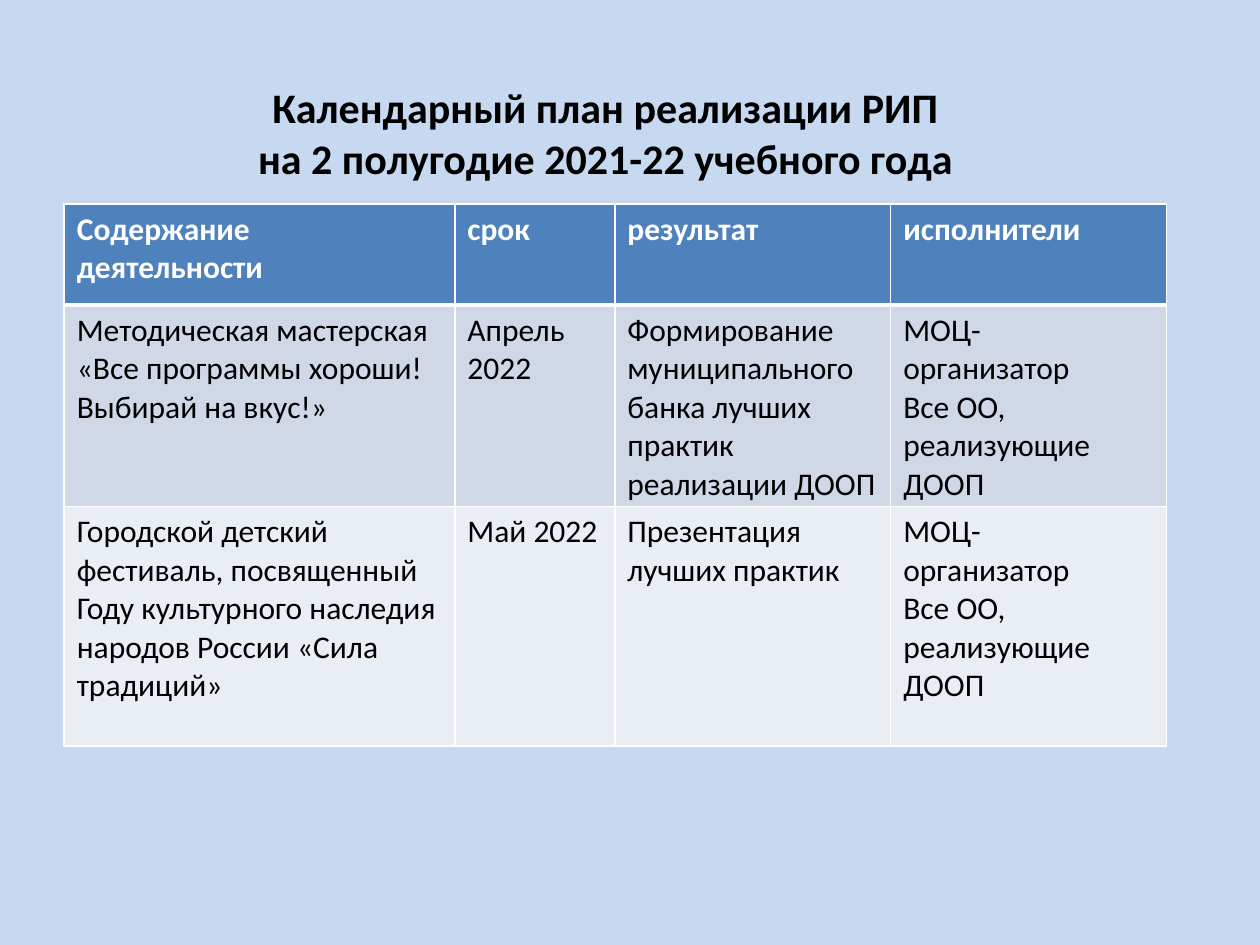
from lxml import etree
from pptx import Presentation
from pptx.dml.color import RGBColor
from pptx.enum.text import MSO_ANCHOR, MSO_AUTO_SIZE, PP_ALIGN
from pptx.oxml.ns import qn
from pptx.util import Inches, Pt

CENTER = PP_ALIGN.CENTER
TOP = MSO_ANCHOR.TOP
FIT_SHAPE = MSO_AUTO_SIZE.SHAPE_TO_FIT_TEXT

BACKGROUND = RGBColor(0xC6, 0xD9, 0xF1)
HEADER_FILL = RGBColor(0x4F, 0x81, 0xBD)
ROW_FILLS = [HEADER_FILL, RGBColor(0xD0, 0xD8, 0xE8), RGBColor(0xE9, 0xED, 0xF4)]
BLACK = RGBColor(0, 0, 0)
WHITE = RGBColor(0xFF, 0xFF, 0xFF)

TITLE_LINES = [
    "Календарный план реализации РИП",
    "на 2 полугодие 2021-22 учебного года",
]
PERFORMERS = "МОЦ- организатор\nВсе ОО, реализующие ДООП"
PLAN = [
    ["Содержание деятельности", "срок", "результат", "исполнители"],
    [
        "Методическая мастерская «Все программы хороши! Выбирай на вкус!»",
        "Апрель 2022",
        "Формирование муниципального банка лучших практик реализации ДООП",
        PERFORMERS,
    ],
    [
        "Городской детский фестиваль, посвященный Году культурного наследия "
        "народов России «Сила традиций»",
        "Май 2022",
        "Презентация лучших практик",
        PERFORMERS,
    ],
]
COLUMN_WIDTHS = [3.1, 1.27, 2.19, 2.19]
ROW_HEIGHTS = [0.8, 1.6, 1.9]


def format_text(frame, size, color, bold):
    font_values = {"name": "Calibri", "size": Pt(size), "bold": bold}
    for para in frame.paragraphs:
        for span in para.runs:
            for name, value in font_values.items():
                setattr(span.font, name, value)
            span.font.color.rgb = color


def add_borders(cell, widths):
    properties = cell._tc.get_or_add_tcPr()
    for side, width in widths.items():
        line = etree.SubElement(properties, qn(f"a:ln{side}"), w=str(Pt(width)))
        fill = etree.SubElement(line, qn("a:solidFill"))
        etree.SubElement(fill, qn("a:srgbClr"), val=str(WHITE))


# Page
deck = Presentation()
deck.slide_width = Inches(10)
deck.slide_height = Inches(7.5)
page = deck.slides.add_slide(deck.slide_layouts.get_by_name("Title Only"))
page.background.fill.solid()
page.background.fill.fore_color.rgb = BACKGROUND

# Title
title = page.shapes.title
title.left, title.top = Inches(1.46), Inches(0.6)
title.width, title.height = Inches(6.69), Inches(0.91)
title_frame = title.text_frame
title_frame.text = "\n".join(TITLE_LINES)
frame_values = {"word_wrap": True, "vertical_anchor": TOP, "auto_size": FIT_SHAPE}
for name, value in frame_values.items():
    setattr(title_frame, name, value)
for para in title_frame.paragraphs:
    para.alignment = CENTER
format_text(title_frame, 24, BLACK, True)

# Plan table
table = page.shapes.add_table(
    len(PLAN), len(COLUMN_WIDTHS), Inches(0.51), Inches(1.62),
    Inches(sum(COLUMN_WIDTHS)), Inches(sum(ROW_HEIGHTS)),
).table
for column, width in zip(table.columns, COLUMN_WIDTHS):
    column.width = Inches(width)
for row, height in zip(table.rows, ROW_HEIGHTS):
    row.height = Inches(height)

for row_index, texts in enumerate(PLAN):
    is_header = row_index == 0
    # A thick line parts the header from the rows below
    borders = {
        "L": 1,
        "R": 1,
        "T": 3 if row_index == 1 else 1,
        "B": 3 if is_header else 1,
    }
    for column_index, text in enumerate(texts):
        cell = table.cell(row_index, column_index)
        cell.text = text
        format_text(cell.text_frame, 18, WHITE if is_header else BLACK, is_header)
        add_borders(cell, borders)
        cell.fill.solid()
        cell.fill.fore_color.rgb = ROW_FILLS[row_index]

deck.save("out.pptx")
